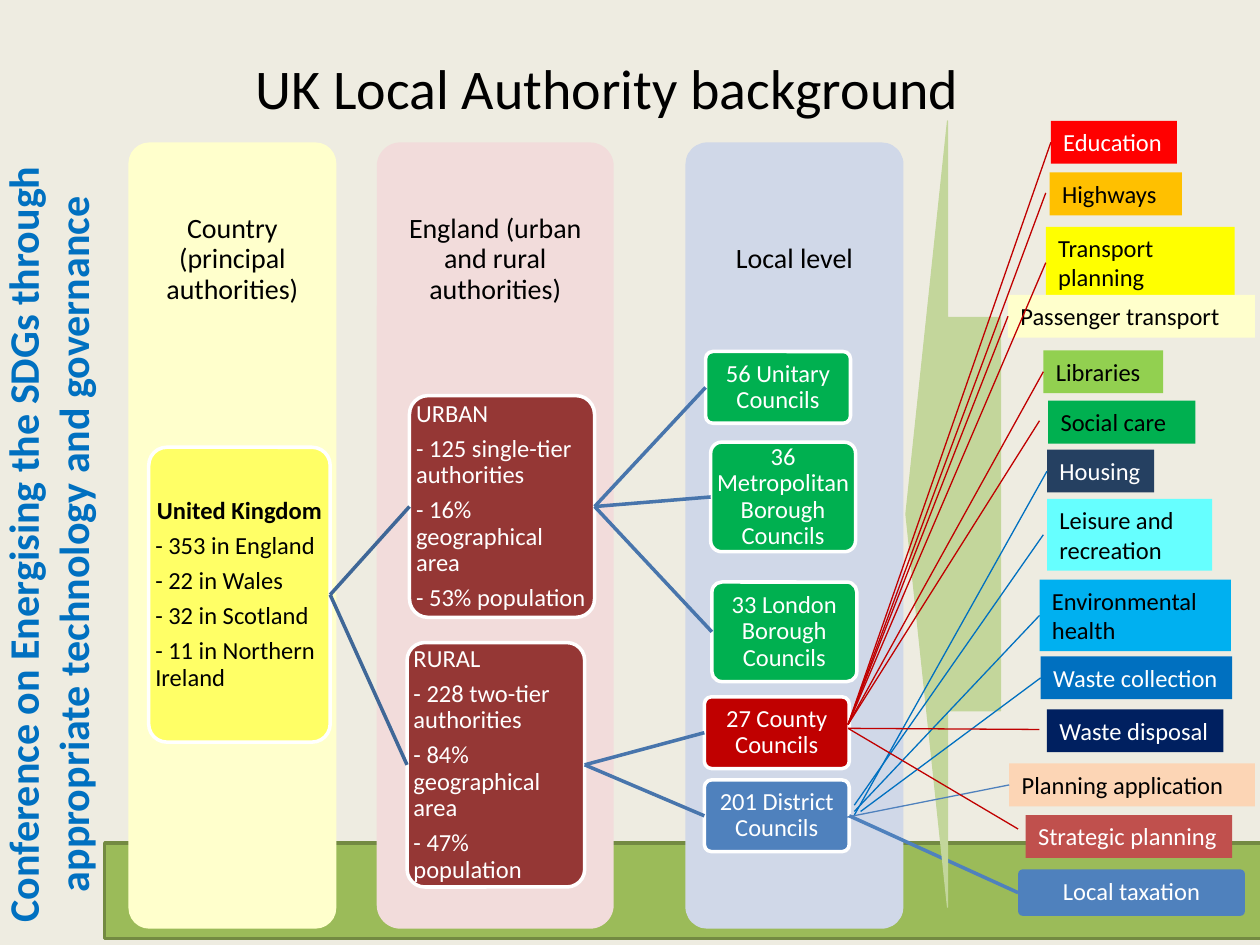
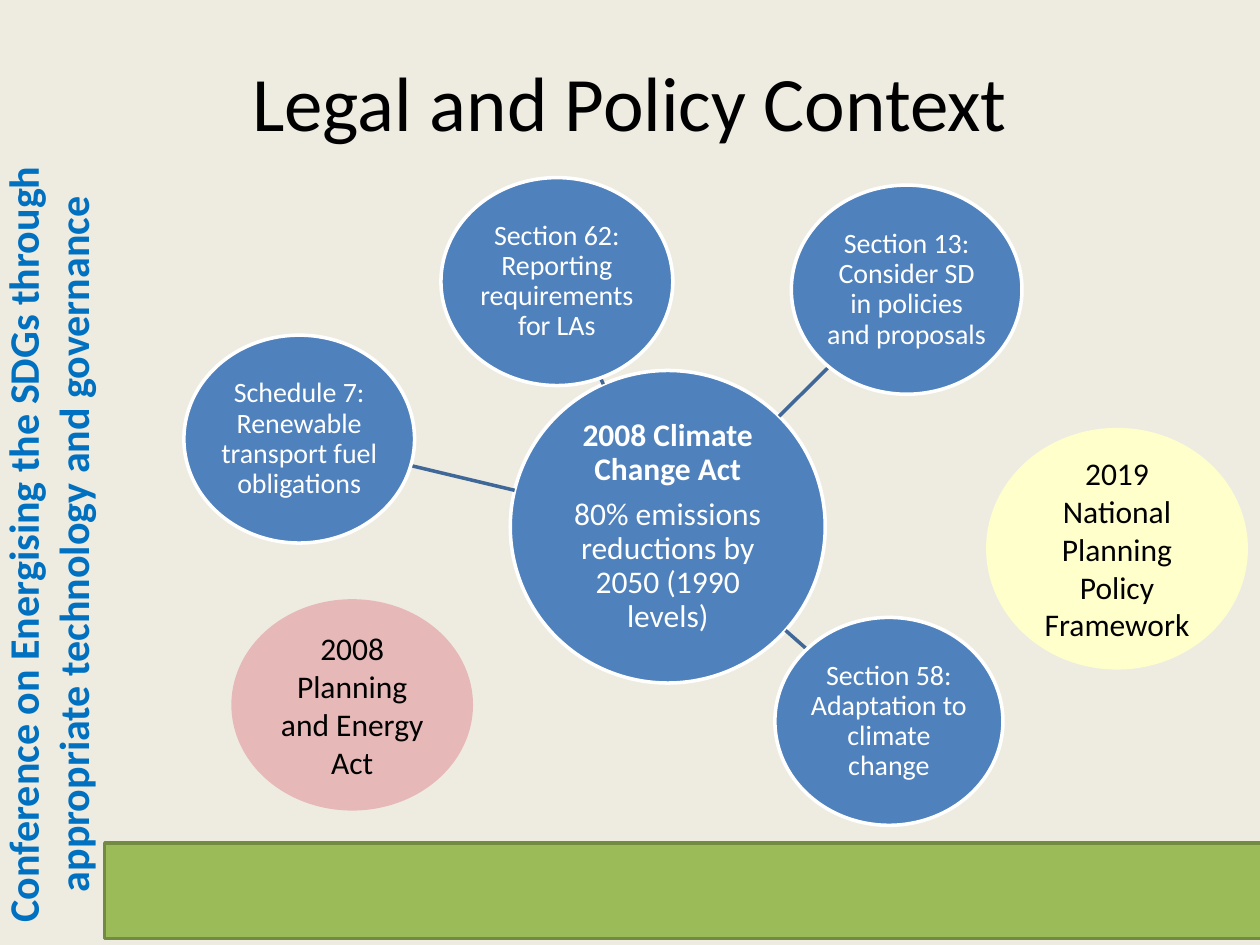
from math import hypot

from lxml.etree import SubElement
from pptx import Presentation
from pptx.dml.color import RGBColor
from pptx.enum.shapes import MSO_CONNECTOR, MSO_SHAPE
from pptx.enum.text import MSO_ANCHOR, MSO_AUTO_SIZE, PP_ALIGN
from pptx.oxml.ns import qn
from pptx.util import Pt

FONT = "Calibri"
BLACK = RGBColor(0x00, 0x00, 0x00)
WHITE = RGBColor(0xFF, 0xFF, 0xFF)
PAPER = RGBColor(0xEE, 0xEC, 0xE1)
GRASS = RGBColor(0x9B, 0xBB, 0x59)
GRASS_EDGE = RGBColor(0x73, 0x8A, 0x42)
SAGE = RGBColor(0xC3, 0xD6, 0x9B)
BLUE = RGBColor(0x00, 0x70, 0xC0)
STEEL = RGBColor(0x4F, 0x81, 0xBD)
LINK_DARK = RGBColor(0x3F, 0x67, 0x97)
LINK_MID = RGBColor(0x48, 0x75, 0xAC)
RED = RGBColor(0xC0, 0x00, 0x00)
GREEN = RGBColor(0x00, 0xB0, 0x50)
BROWN = RGBColor(0x95, 0x37, 0x35)
CREAM = RGBColor(0xFF, 0xFF, 0xCC)
LEMON = RGBColor(0xFF, 0xFF, 0x66)
BLUSH = RGBColor(0xF2, 0xDC, 0xDB)
ROSE = RGBColor(0xE6, 0xB9, 0xB8)
MIST = RGBColor(0xD0, 0xD8, 0xE8)
SCARLET = RGBColor(0xFF, 0x00, 0x00)
AMBER = RGBColor(0xFF, 0xC0, 0x00)
YELLOW = RGBColor(0xFF, 0xFF, 0x00)
LIME = RGBColor(0x92, 0xD0, 0x50)
SLATE = RGBColor(0x25, 0x40, 0x61)
AQUA = RGBColor(0x66, 0xFF, 0xFF)
SKY = RGBColor(0x00, 0xB0, 0xF0)
NAVY = RGBColor(0x00, 0x20, 0x60)
PEACH = RGBColor(0xFC, 0xD5, 0xB5)
BRICK = RGBColor(0xC0, 0x50, 0x4D)

CONFERENCE = "Conference on Energising the SDGs through appropriate technology and governance"
SIDEBAR_BOX = (-198.7, 283.7, 451.4, 54.7)
BAND_BOX = (59.8, 481.7, 661, 54.7)

COLUMN_TOP, COLUMN_HEIGHT = 81.4, 449.3
COLUMNS = [
    ("Local level", 391.7, 124.6, MIST),
    ("England (urban and rural authorities)", 215.3, 135.4, BLUSH),
    ("Country (principal authorities)", 73.4, 118.8, CREAM),
]

AUTHORITIES = {
    "country": (["United Kingdom", "- 353 in England", "- 22 in Wales",
                 "- 32 in Scotland", "- 11 in Northern Ireland"],
                (85, 255.6, 103.7, 168.5), LEMON, None),
    "urban": (["URBAN", "- 125 single-tier authorities",
               "- 16% geographical area", "- 53% population"],
              (234, 226.1, 105.8, 126.7), BROWN, "country"),
    "unitary": (["56 Unitary Councils"], (403.2, 200.9, 82.8, 41), GREEN, "urban"),
    "metropolitan": (["36 Metropolitan Borough Councils"],
                     (406.1, 252.7, 82.8, 62.6), GREEN, "urban"),
    "london": (["33 London Borough Councils"],
               (406.8, 332.6, 82.8, 56.9), GREEN, "urban"),
    "rural": (["RURAL", "- 228 two-tier authorities",
               "- 84% geographical area", "- 47% population"],
              (232.6, 367.2, 101.5, 139.7), BROWN, "country"),
    "county": (["27 County Councils"], (402.5, 398.2, 82.8, 41), RED, "rural"),
    "district": (["201 District Councils"], (402.5, 445.7, 82.8, 41), STEEL, "rural"),
    "taxation": (["Local taxation"], (581.8, 496.8, 129.6, 26.6), STEEL, "district"),
}

LABEL_HEIGHT, TALL_LABEL_HEIGHT = 24.5, 41
COUNTY_HIGH, COUNTY_MIDDLE = (484.6, 414), (484.6, 416.2)
JOINED = (0, 0)
SERVICES = [
    ("Education", 600.5, 69.1, 72, SCARLET, WHITE, RED, COUNTY_HIGH, JOINED),
    ("Highways", 599.8, 98.6, 75.6, AMBER, BLACK, RED, COUNTY_HIGH, (-2.2, -0.6)),
    ("Transport planning", 597.6, 129.6, 108, YELLOW, BLACK, RED, COUNTY_HIGH, JOINED),
    ("Passenger transport", 576, 168.5, 141.1, CREAM, BLACK, RED, COUNTY_HIGH, JOINED),
    ("Libraries", 596.2, 200.2, 68.4, LIME, BLACK, RED, COUNTY_HIGH, JOINED),
    ("Social care", 599, 229, 84.2, GREEN, BLACK, RED, COUNTY_HIGH, (-5, -0.8)),
    ("Housing", 598.3, 257, 61.2, SLATE, WHITE, BLUE, (488.2, 465.8), JOINED),
    ("Leisure and recreation", 598.3, 285.1, 94.3, AQUA, BLACK, BLUE,
     (488.2, 460.1), (-2.1, 0)),
    ("Environmental health", 594, 331.2, 109.4, SKY, BLACK, BLUE, (488.2, 463.7), JOINED),
    ("Waste collection", 594.7, 375.1, 109.4, BLUE, WHITE, BLUE, (491.8, 463.7), JOINED),
    ("Waste disposal", 598.3, 405.4, 100.8, NAVY, WHITE, RED, COUNTY_MIDDLE, (-4.3, -0.8)),
    ("Planning application", 576.7, 436.3, 140.4, PEACH, BLACK, STEEL,
     (471.6, 469.4), JOINED),
    ("Strategic planning", 586.1, 465.8, 118.1, BRICK, WHITE, RED,
     COUNTY_MIDDLE, (-4.3, -4.3)),
]
WRAPPED_SERVICES = {"Transport planning", "Leisure and recreation", "Environmental health"}

HUB_TEXT = ["2008 Climate Change Act", "80% emissions reductions by 2050 (1990 levels)"]
HUB_BOX = (291.6, 211.7, 180, 178.6)
SECTIONS = [
    ("Section 62: Reporting requirements for LAs", (252, 101.5, 132.5, 118.8)),
    ("Section 13: Consider SD in policies and proposals", (452.2, 105.8, 131.8, 119.5)),
    ("Section 58: Adaptation to climate change", (442.8, 352.8, 130.3, 118.8)),
    ("Schedule 7: Renewable transport fuel obligations", (105.1, 191.5, 131.8, 118.8)),
]
OTHER_POLICIES = [
    ("2008 Planning and Energy Act", (133.2, 343.4, 136.1, 118.8), ROSE),
    ("2019 National Planning Policy Framework", (564.5, 245.5, 147.6, 136.1), CREAM),
]


def write(shape, lines, size=14, color=BLACK, align=PP_ALIGN.CENTER, bold=False,
          lead=False, spacing=None, insets=(7.2, 3.6, 7.2, 3.6),
          anchor=MSO_ANCHOR.MIDDLE, wrap=True):
    frame = shape.text_frame
    frame.word_wrap = wrap
    frame.auto_size = MSO_AUTO_SIZE.NONE
    frame.vertical_anchor = anchor
    (frame.margin_left, frame.margin_top,
     frame.margin_right, frame.margin_bottom) = [Pt(inset) for inset in insets]
    for index, line in enumerate(lines):
        para = frame.paragraphs[0] if index == 0 else frame.add_paragraph()
        is_lead = lead and index == 0
        para.alignment = PP_ALIGN.CENTER if is_lead else align
        if spacing:
            para.line_spacing = spacing
            para.space_after = Pt(round(size * 0.35, 1))
        span = para.add_run()
        span.text = line
        span.font.name = FONT
        span.font.size = Pt(size)
        span.font.bold = bold or is_lead
        span.font.color.rgb = color


def add_block(page, kind, box, fill, edge=None, edge_width=2, corner=None):
    shape = page.shapes.add_shape(kind, *[Pt(length) for length in box])
    shape.shadow.inherit = False
    shape.fill.solid()
    shape.fill.fore_color.rgb = fill
    if edge is None:
        shape.line.fill.background()
    else:
        shape.line.color.rgb = edge
        shape.line.width = Pt(edge_width)
    if corner is not None:
        shape.adjustments[0] = corner
    return shape


def add_link(page, start, end, color, width):
    link = page.shapes.add_connector(
        MSO_CONNECTOR.STRAIGHT, *[Pt(length) for length in (*start, *end)])
    link.line.color.rgb = color
    link.line.width = Pt(width)
    SubElement(link.element.spPr, qn("a:effectLst"))
    return link


def add_page(deck, title, box, size):
    page = deck.slides.add_slide(deck.slide_layouts[5])
    heading = page.shapes.title
    heading.left, heading.top, heading.width, heading.height = [Pt(n) for n in box]
    write(heading, [title], size=size)
    return page


def dress_master(deck, page):
    master = deck.slide_master
    master.background.fill.solid()
    master.background.fill.fore_color.rgb = PAPER
    sidebar = page.shapes.add_textbox(*[Pt(n) for n in SIDEBAR_BOX])
    sidebar.rotation = 270
    write(sidebar, [CONFERENCE], size=24, color=BLUE, bold=True)
    band = add_block(page, MSO_SHAPE.RECTANGLE, BAND_BOX, GRASS, GRASS_EDGE)
    for number, shape in enumerate((sidebar, band), 101):
        shape.element.nvSpPr.cNvPr.set("id", str(number))
        master.shapes.element.append(shape.element)


def add_authorities(page):
    for text, left, width, fill in COLUMNS:
        column = add_block(page, MSO_SHAPE.ROUNDED_RECTANGLE,
                           (left, COLUMN_TOP, width, COLUMN_HEIGHT), fill, corner=0.1)
        write(column, [text], size=16, spacing=0.9, insets=(5, 5, 5, 320))
    cards = {}
    for name, (lines, box, fill, parent) in AUTHORITIES.items():
        edge = None if name == "taxation" else WHITE
        card = add_block(page, MSO_SHAPE.ROUNDED_RECTANGLE, box, fill, edge, corner=0.1)
        write(card, lines, color=BLACK if parent is None else WHITE,
              align=PP_ALIGN.LEFT if len(lines) > 1 else PP_ALIGN.CENTER,
              lead=parent is None, spacing=0.9, insets=(0.7,) * 4)
        cards[name] = card
        if parent:
            color = {"country": LINK_DARK, "district": STEEL}.get(parent, LINK_MID)
            link = add_link(page, (0, 0), (0, 0), color, 2)
            link.begin_connect(cards[parent], 3)
            link.end_connect(card, 1)


def add_services(page):
    arrow = add_block(page, MSO_SHAPE.RIGHT_ARROW, (517.7, 69.1, 54, 449.3),
                      SAGE, SAGE, edge_width=0.75)
    arrow.rotation = 180
    arrow.adjustments[0], arrow.adjustments[1] = 0.5, 0.44
    labels = []
    for text, left, top, width, fill, ink, *_ in SERVICES:
        wrap = text in WRAPPED_SERVICES
        height = TALL_LABEL_HEIGHT if wrap else LABEL_HEIGHT
        label = add_block(page, MSO_SHAPE.RECTANGLE, (left, top, width, height), fill)
        write(label, [text], color=ink, align=PP_ALIGN.LEFT,
              anchor=MSO_ANCHOR.TOP, wrap=wrap)
        labels.append(label)
    for label, (*_, color, start, offset) in zip(labels, SERVICES):
        end = (label.left.pt + offset[0], label.top.pt + label.height.pt / 2 + offset[1])
        link = add_link(page, start, end, color, 0.75)
        if offset == JOINED:
            link.end_connect(label, 1)


def centre(box):
    left, top, width, height = box
    return left + width / 2, top + height / 2


def rim(box, target):
    x, y = centre(box)
    across, down = target[0] - x, target[1] - y
    reach = hypot(across / (box[2] / 2), down / (box[3] / 2))
    return x + across / reach, y + down / reach


def add_climate_act(page):
    bubbles = [(HUB_TEXT, HUB_BOX, 18)] + [([text], box, 16) for text, box in SECTIONS]
    for lines, box, size in bubbles:
        if box != HUB_BOX:
            add_link(page, rim(HUB_BOX, centre(box)), rim(box, centre(HUB_BOX)),
                     LINK_DARK, 2)
        bubble = add_block(page, MSO_SHAPE.OVAL, box, STEEL, WHITE)
        write(bubble, lines, size=size, color=WHITE, lead=box == HUB_BOX,
              spacing=0.9, insets=(0.7,) * 4)
    for text, box, fill in OTHER_POLICIES:
        write(add_block(page, MSO_SHAPE.OVAL, box, fill, fill), [text], size=18)


def main():
    deck = Presentation()
    deck.slide_width, deck.slide_height = Pt(720), Pt(540)
    page = add_page(deck, "UK Local Authority background", (27.4, 16.6, 639.4, 66.2), 32)
    dress_master(deck, page)
    add_authorities(page)
    add_services(page)
    page = add_page(deck, "Legal and Policy Context", (54.7, 25.9, 610.6, 63.4), 44)
    add_climate_act(page)
    deck.save("out.pptx")


if __name__ == "__main__":
    main()
